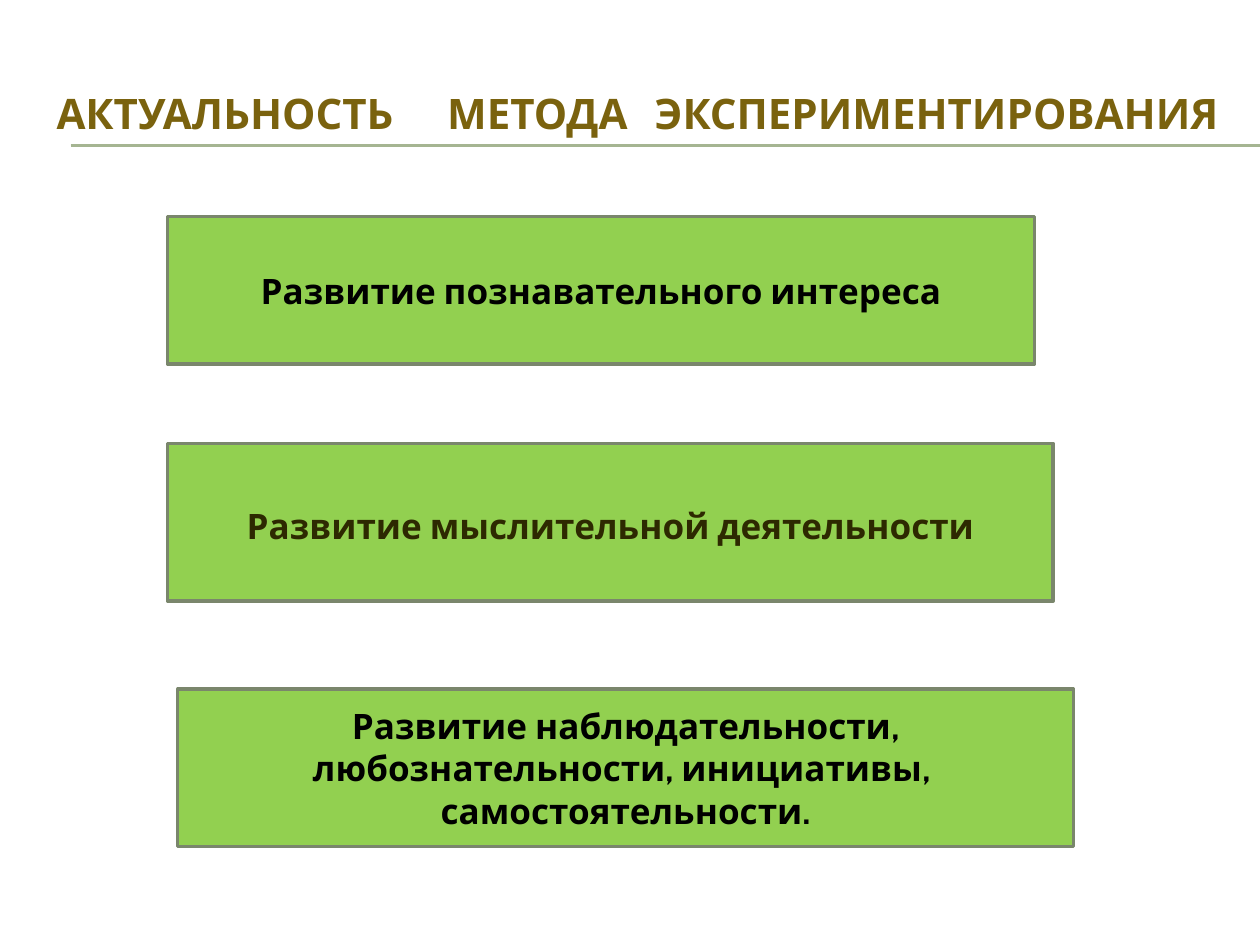
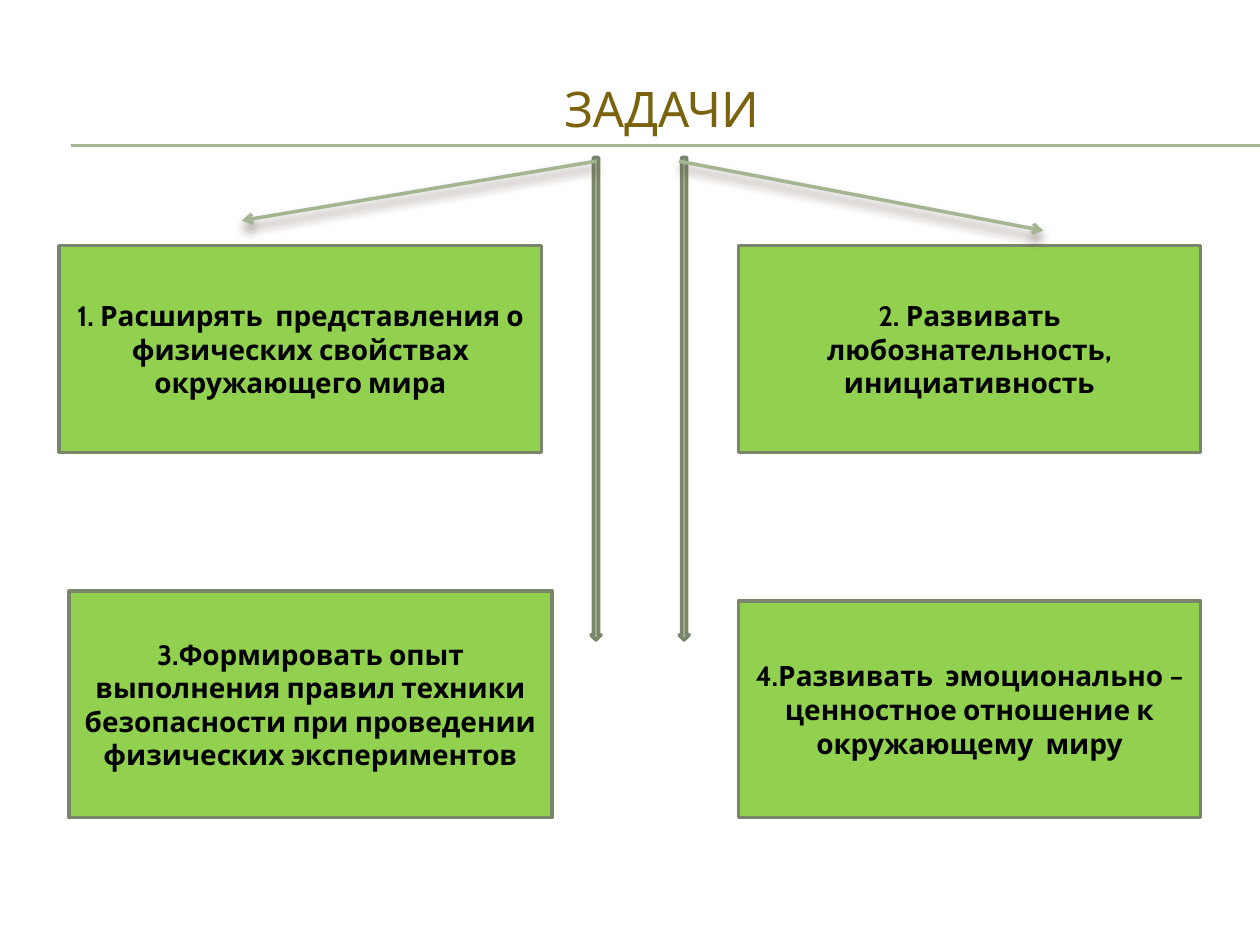
"""Builds two slides on teaching by experiment: why it matters and its tasks."""
from lxml import etree
from pptx import Presentation
from pptx.dml.color import RGBColor
from pptx.enum.shapes import MSO_CONNECTOR, MSO_SHAPE
from pptx.enum.text import MSO_ANCHOR, PP_ALIGN
from pptx.oxml import parse_xml
from pptx.oxml.ns import nsdecls, qn
from pptx.util import Inches, Pt

RECT, DOWN = MSO_SHAPE.RECTANGLE, MSO_SHAPE.DOWN_ARROW
LINE = MSO_CONNECTOR.STRAIGHT
MID, CENTER = MSO_ANCHOR.MIDDLE, PP_ALIGN.CENTER
FONT = "Cabin"
GOLD, GREEN, SAGE, EDGE = "7A620E", "92D050", "A5B592", "7A866C"
BLACK, BROWN = "000000", "2D2901"
SPACE = 0.21
NONE = f"<a:effectLst {nsdecls('a')}/>"
SHADE = (
    f"<a:effectLst {nsdecls('a')}>"
    '<a:outerShdw blurRad="76200" dist="50800" dir="5400000" rotWithShape="0">'
    '<a:srgbClr val="4E3B30"><a:alpha val="60000"/></a:srgbClr>'
    "</a:outerShdw></a:effectLst>"
)


def paint(target, color):
    if hasattr(target, "solid"):
        target.solid()
        target.fore_color.rgb = RGBColor.from_string(color)
    else:
        target.color.rgb = RGBColor.from_string(color)


def write(frame, paras, size, color, bold=True):
    """Write paragraphs whose numbers stand for a gap that many spaces wide."""
    frame.word_wrap = True
    frame.vertical_anchor = MID
    for n, parts in enumerate(paras):
        par = frame.paragraphs[0] if n == 0 else frame.add_paragraph()
        par.alignment = CENTER
        for part in parts:
            run = par.add_run()
            font = run.font
            font.name, font.size, font.bold = FONT, Pt(size), bold
            paint(font, color)
            if isinstance(part, int):
                run.text = " "
                extra = round((part - 1) * size * SPACE * 100)
                run._r.get_or_add_rPr().set("spc", str(extra))
            else:
                run.text = part


pages = [
    {
        "title": ["АКТУАЛЬНОСТЬ", 6, "МЕТОДА", 3, "ЭКСПЕРИМЕНТИРОВАНИЯ"],
        "at": (0.31, 0.31, 9.5, 1.17), "head": 24, "bold": True, "size": 20,
        "boxes": [
            ((1.33, 1.72, 6.88, 1.17), BLACK, 0.05,
             [["Развитие познавательного интереса"]]),
            ((1.33, 3.52, 7.03, 1.25), BROWN, 0.1,
             [["Развитие мыслительной деятельности"]]),
            ((1.41, 5.47, 7.11, 1.25), BLACK, 0.05,
             [["Развитие наблюдательности, любознательности, инициативы, "],
              ["самостоятельности."]]),
        ],
        "bars": [], "rays": [],
    },
    {
        "title": ["ЗАДАЧИ"],
        "at": (0.5, 0.47, 9.5, 0.78), "head": 28, "bold": False, "size": 16,
        "boxes": [
            ((0.47, 1.95, 3.83, 1.64), BLACK, 0.05,
             [["1. Расширять", 2, "представления о физических свойствах "
               "окружающего мира"]]),
            ((5.86, 1.95, 3.67, 1.64), BLACK, 0.05,
             [["2. Развивать любознательность, инициативность"]]),
            ((0.55, 4.69, 3.83, 1.8), BLACK, 0.05,
             [["3.Формировать опыт выполнения правил техники безопасности "
               "при проведении физических экспериментов"]]),
            ((5.86, 4.77, 3.67, 1.72), BLACK, 0.05,
             [["4.Развивать", 2, "эмоционально – ценностное отношение к "
               "окружающему", 2, "миру"]]),
        ],
        "bars": [4.69, 5.39],
        "rays": [(4.73, 1.28, 1.92, 1.75), (5.39, 1.28, 8.28, 1.83)],
    },
]

deck = Presentation()
deck.slide_width, deck.slide_height = Inches(10), Inches(7.5)

for page in pages:
    slide = deck.slides.add_slide(deck.slide_layouts[5])
    shapes = slide.shapes
    paint(slide.background.fill, "FFFFFF")

    title = shapes.title
    title.left, title.top, title.width, title.height = map(Inches, page["at"])
    write(title.text_frame, [page["title"]], page["head"], GOLD, page["bold"])

    rules = [(0.56, y, 10, y) for y in (1.15, 1.16)]
    blocks = [(RECT, box[0], GREEN, box) for box in page["boxes"]]
    blocks += [(DOWN, (x, 1.25, 0.08, 3.83), SAGE, None) for x in page["bars"]]
    for kind, spot, color, box in blocks:
        shape = shapes.add_shape(kind, *map(Inches, spot))
        shape.shadow.inherit = False
        paint(shape.fill, color)
        paint(shape.line, EDGE)
        shape.line.width = Pt(2)
        if box:
            shape.text_frame.margin_top = Inches(box[2])
            write(shape.text_frame, box[3], page["size"], box[1])

    for ends in rules + page["rays"]:
        ray = ends in page["rays"]
        line = shapes.add_connector(LINE, *map(Inches, ends))
        paint(line.line, SAGE)
        line.line.width = Pt(2 if ray else 0.75)
        if ray:
            etree.SubElement(line.line._ln, qn("a:tailEnd"), type="arrow")
        line._element.spPr.append(parse_xml(SHADE if ray else NONE))

deck.save("out.pptx")
